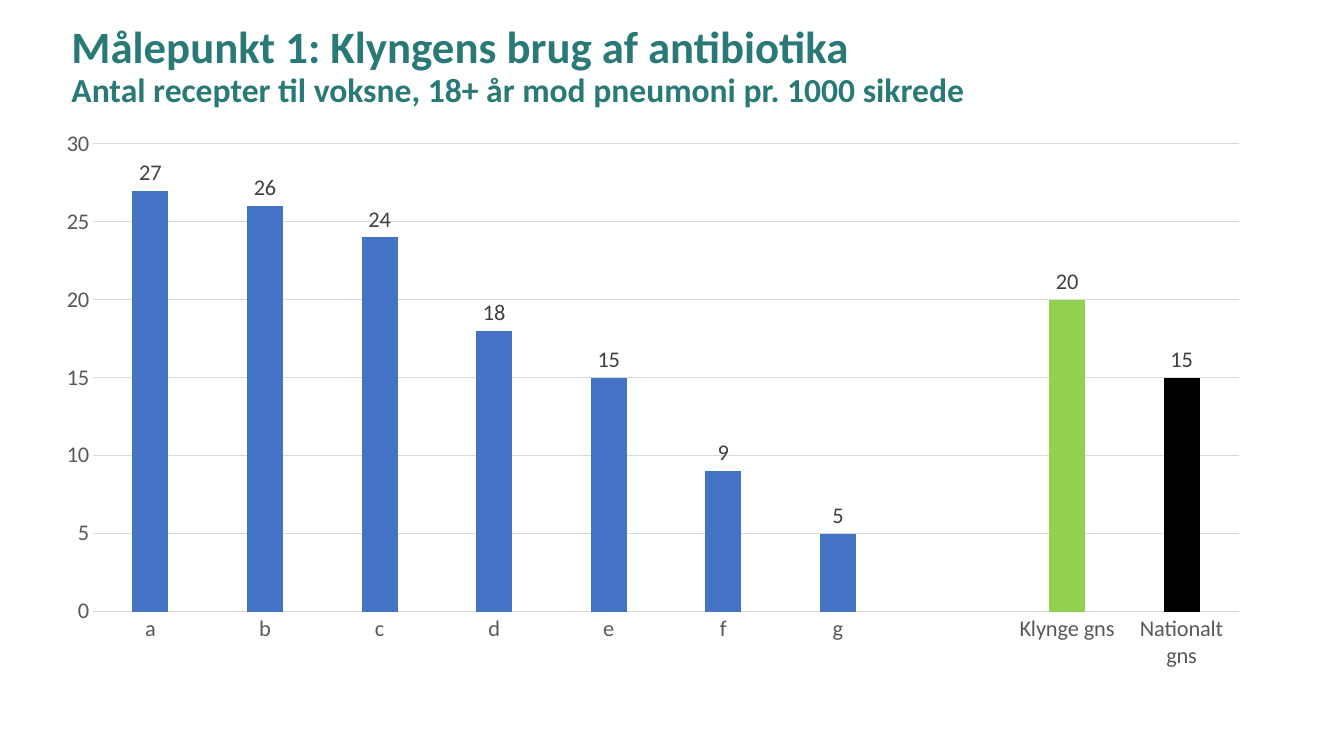
from pptx import Presentation
from pptx.chart.data import CategoryChartData as ChartData
from pptx.dml.color import RGBColor
from pptx.enum.chart import XL_CHART_TYPE as ChartType
from pptx.enum.chart import XL_LABEL_POSITION as LabelPosition
from pptx.enum.chart import XL_TICK_MARK as TickMark
from pptx.enum.text import MSO_ANCHOR as Anchor
from pptx.util import Inches, Pt


def color(hex_value):
    return RGBColor.from_string(hex_value)


def style_font(font, name, size, hex_value, bold=False):
    font.name = name
    font.size = Pt(size)
    font.bold = bold
    font.color.rgb = color(hex_value)


def add_text(paragraph, text, **font_format):
    run = paragraph.add_run()
    run.text = text
    style_font(run.font, **font_format)


class SlideBuilder:
    FONT = "Calibri"
    TEAL, BLUE = "297A77", "4472C4"
    GRID, AXIS_TEXT, LABEL_TEXT = "D9D9D9", "595959", "404040"
    CHART_SIZE = 16

    def __init__(self, slide):
        self.slide = slide

    def heading(self, lines, left, top, width, height):
        """Draw (text, size) lines as one paragraph with line breaks."""
        box = self.slide.shapes.add_textbox(
            Inches(left), Inches(top), Inches(width), Inches(height))
        frame = box.text_frame
        frame.word_wrap = True
        frame.vertical_anchor = Anchor.MIDDLE
        paragraph = frame.paragraphs[0]
        paragraph.line_spacing = 0.9
        for index, (text, size) in enumerate(lines):
            if index:
                paragraph.add_line_break()
            add_text(paragraph, text, name=self.FONT, size=size,
                     hex_value=self.TEAL, bold=True)

    def line(self, line_format):
        line_format.color.rgb = color(self.GRID)
        line_format.width = Pt(0.75)

    def axis(self, axis):
        axis.major_tick_mark = axis.minor_tick_mark = TickMark.NONE
        style_font(axis.tick_labels.font, self.FONT, self.CHART_SIZE, self.AXIS_TEXT)

    def column_chart(self, prescriptions, highlights, left, top, width, height):
        data = ChartData()
        data.categories = [name for name, _ in prescriptions]
        data.add_series("Series 1", [value for _, value in prescriptions])
        chart = self.slide.shapes.add_chart(
            ChartType.COLUMN_CLUSTERED, Inches(left), Inches(top),
            Inches(width), Inches(height), data).chart
        chart.has_legend = chart.has_title = False
        style_font(chart.font, self.FONT, self.CHART_SIZE, "000000")

        # Axes and gridlines
        clinics, counts = chart.category_axis, chart.value_axis
        self.axis(clinics)
        self.line(clinics.format.line)
        self.axis(counts)
        counts.format.line.fill.background()
        counts.minimum_scale, counts.maximum_scale, counts.major_unit = 0, 30, 5
        counts.has_major_gridlines = True
        self.line(counts.major_gridlines.format.line)

        # Columns
        plot = chart.plots[0]
        plot.vary_by_categories = False
        plot.gap_width, plot.overlap = 219, -27
        columns = plot.series[0]
        columns.invert_if_negative = False
        columns.format.fill.solid()
        columns.format.fill.fore_color.rgb = color(self.BLUE)
        for index, (name, _) in enumerate(prescriptions):
            if name in highlights:
                fill = columns.points[index].format.fill
                fill.solid()
                fill.fore_color.rgb = color(highlights[name])

        # Values above the columns
        labels = columns.data_labels
        labels.show_value = True
        labels.position = LabelPosition.OUTSIDE_END
        style_font(labels.font, self.FONT, self.CHART_SIZE, self.LABEL_TEXT)


def main():
    deck = Presentation()
    deck.slide_width, deck.slide_height = Inches(13.33), Inches(7.5)
    builder = SlideBuilder(deck.slides.add_slide(deck.slide_layouts[6]))

    # Heading
    builder.heading(
        [("Målepunkt 1: Klyngens brug af antibiotika", 32),
         ("Antal recepter til voksne, 18+ år mod pneumoni pr. 1000 sikrede", 24)],
        0.61, 0.27, 12.11, 0.8)

    # Prescriptions per clinic, with the two averages set apart
    prescriptions = [
        ("a", 27), ("b", 26), ("c", 24), ("d", 18), ("e", 15), ("f", 9), ("g", 5),
        ("", None), ("Klynge gns", 20), ("Nationalt gns", 15)]
    highlights = {"Klynge gns": "92D050", "Nationalt gns": "000000"}
    builder.column_chart(prescriptions, highlights, 0.42, 1.18, 12.11, 5.58)

    deck.save("out.pptx")


if __name__ == "__main__":
    main()
